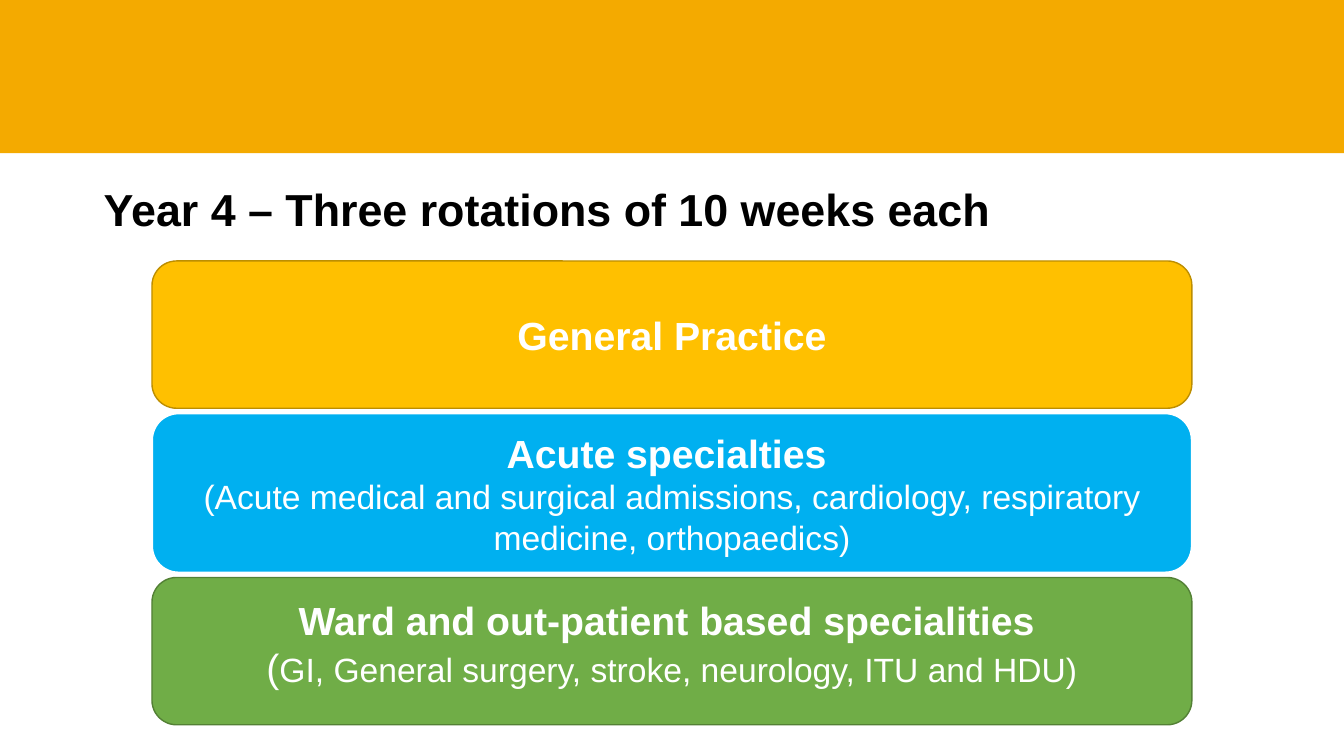
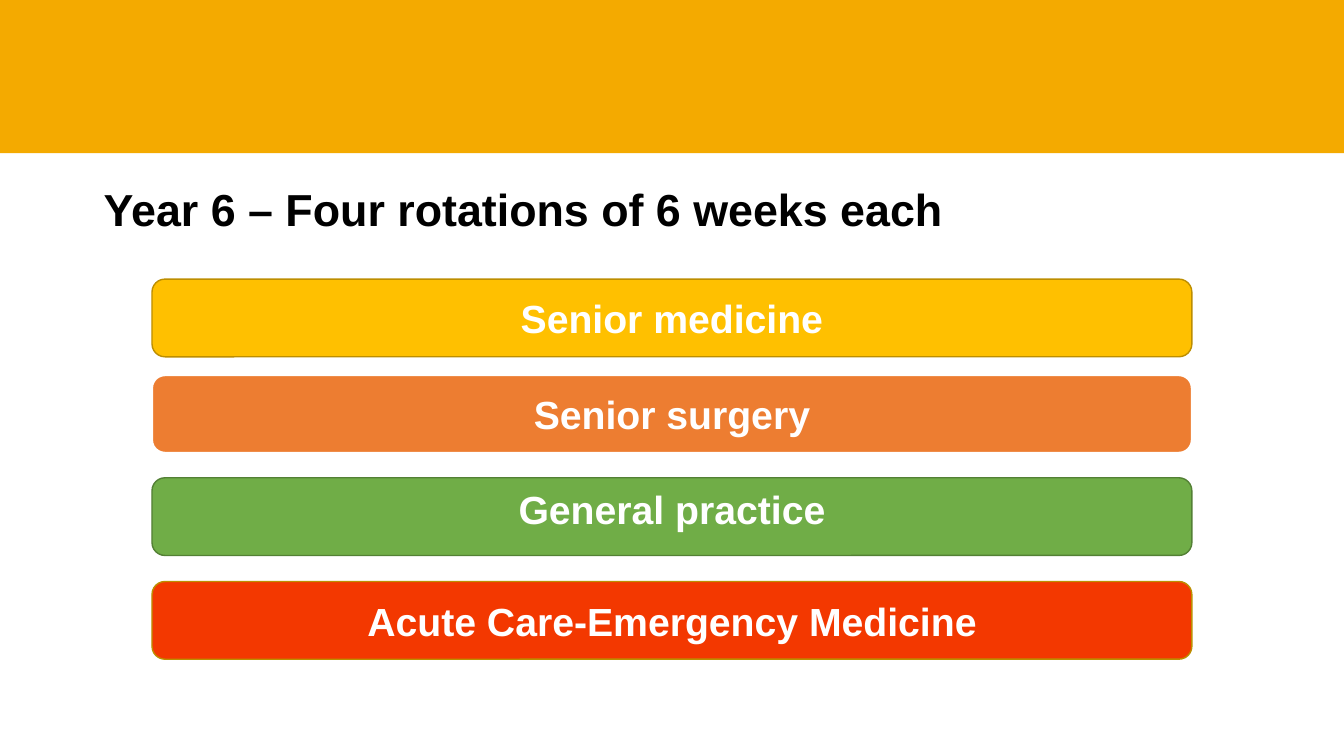
from pptx import Presentation
from pptx.dml.color import RGBColor
from pptx.enum import shapes, text
from pptx.util import Pt

FONT = "Arial"
BAND, BLACK, WHITE = "F4AA00", "000000", "FFFFFF"
YELLOW = ("FFC000", "BD8E00", 1)
BLUE = ("00B0F0", WHITE, 1.5)
ORANGE = ("ED7D31", WHITE, 1.5)
GREEN = ("70AD47", "538035", 1)
RED = ("F33800", "BD8E00", 1)

SLIDE_W, SLIDE_H = 960, 540
BOX_LEFT, BOX_W = 108.6, 742.8
HEADING, DETAIL = 28, 24
INSET, RAISED_INSET = 3.6, 15.1

SLIDES = [
    ("Year 4 – Three rotations of 10 weeks each", [
        (186.4, 105.2, YELLOW, INSET, "General Practice", []),
        (295.2, 113.8, BLUE, INSET, "Acute specialties ",
         [("(Acute medical and surgical admissions, cardiology, respiratory "
           "medicine, orthopaedics)", DETAIL)]),
        (412.5, 105.2, GREEN, RAISED_INSET,
         "Ward and out-patient based specialities ",
         [("(", HEADING),
          ("GI, General surgery, stroke, neurology, ITU and HDU)", DETAIL)]),
    ]),
    ("Year 6 – Four rotations of 6 weeks each", [
        (199.4, 55.5, YELLOW, INSET, "Senior medicine", []),
        (268, 55.5, ORANGE, INSET, "Senior surgery", []),
        (341.3, 55.5, GREEN, RAISED_INSET, "General practice", []),
        (415.4, 55.5, RED, INSET, "Acute Care-Emergency Medicine", []),
    ]),
]


def rgb(value):
    return RGBColor.from_string(value)


def style(font, size, color, bold):
    font.name, font.size, font.bold = FONT, Pt(size), bold
    font.color.rgb = rgb(color)


def add_panel(s, kind, left, top, width, height, fill):
    sp = s.shapes.add_shape(kind, Pt(left), Pt(top), Pt(width), Pt(height))
    sp.shadow.inherit = False
    sp.fill.solid()
    sp.fill.fore_color.rgb = rgb(fill)
    sp.line.fill.background()
    return sp


def add_frame(s, title):
    add_panel(s, shapes.MSO_SHAPE.RECTANGLE, 0, 0, SLIDE_W, 109.4, BAND)
    tf = s.shapes.add_textbox(Pt(67), Pt(126), Pt(734), Pt(46)).text_frame
    tf.word_wrap = True
    tf.auto_size = text.MSO_AUTO_SIZE.SHAPE_TO_FIT_TEXT
    p = tf.paragraphs[0]
    p.text = title
    style(p.font, 32, BLACK, True)


def add_rotation(s, top, height, colors, bottom_inset, heading, details):
    fill, line, line_width = colors
    sp = add_panel(s, shapes.MSO_SHAPE.ROUNDED_RECTANGLE,
                   BOX_LEFT, top, BOX_W, height, fill)
    sp.line.color.rgb = rgb(line)
    sp.line.width = Pt(line_width)
    tf = sp.text_frame
    tf.word_wrap = True
    tf.vertical_anchor = text.MSO_ANCHOR.MIDDLE
    tf.margin_bottom = Pt(bottom_inset)
    p = tf.paragraphs[0]
    p.text = heading
    p.alignment = text.PP_ALIGN.CENTER
    style(p.font, HEADING, WHITE, True)
    if details:
        p = tf.add_paragraph()
        p.alignment = text.PP_ALIGN.CENTER
        for words, size in details:
            r = p.add_run()
            r.text = words
            style(r.font, size, WHITE, False)


def main():
    prs = Presentation()
    prs.slide_width, prs.slide_height = Pt(SLIDE_W), Pt(SLIDE_H)
    for title, rotations in SLIDES:
        s = prs.slides.add_slide(prs.slide_layouts[6])
        add_frame(s, title)
        for rotation in rotations:
            add_rotation(s, *rotation)
    prs.save("out.pptx")


if __name__ == "__main__":
    main()
